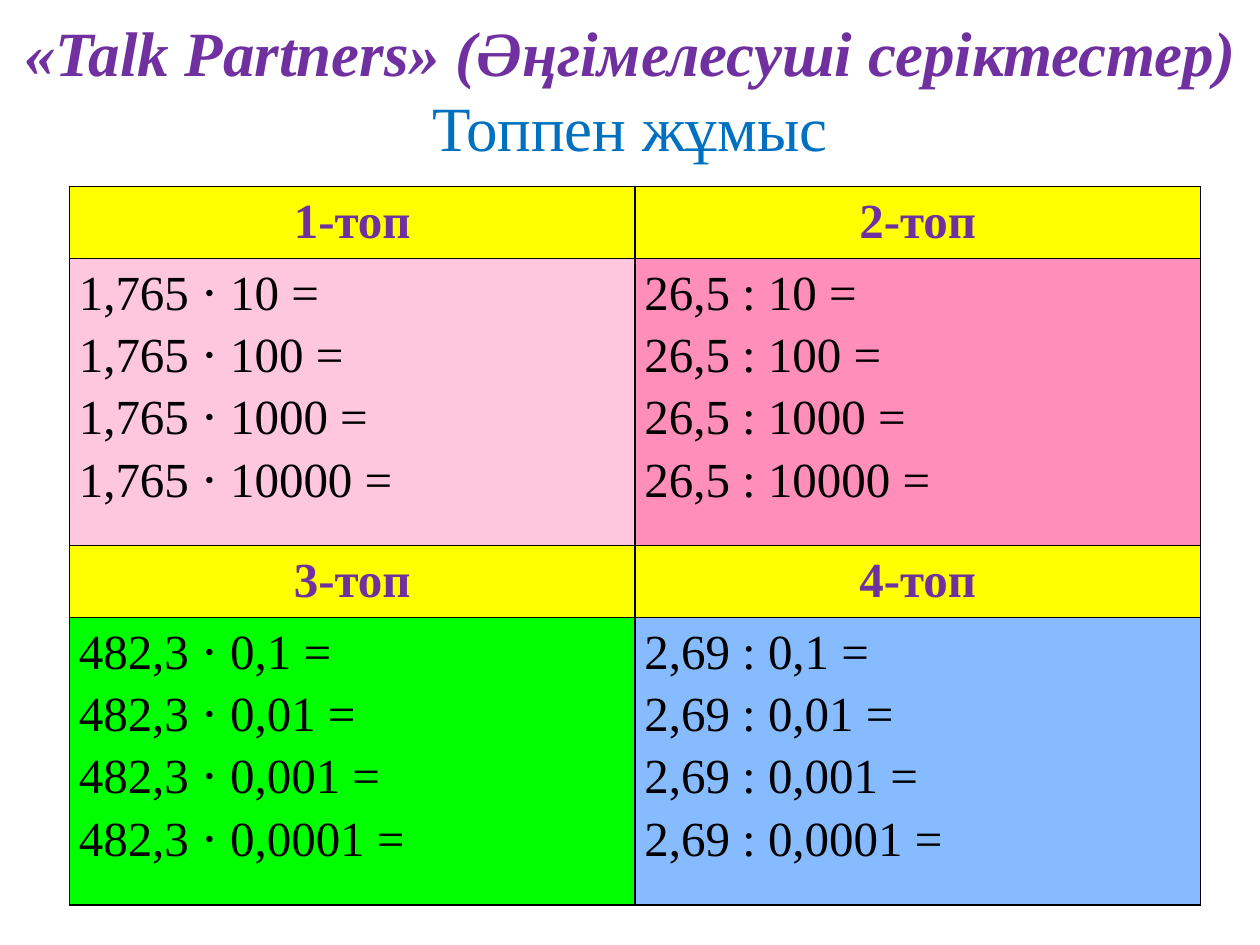
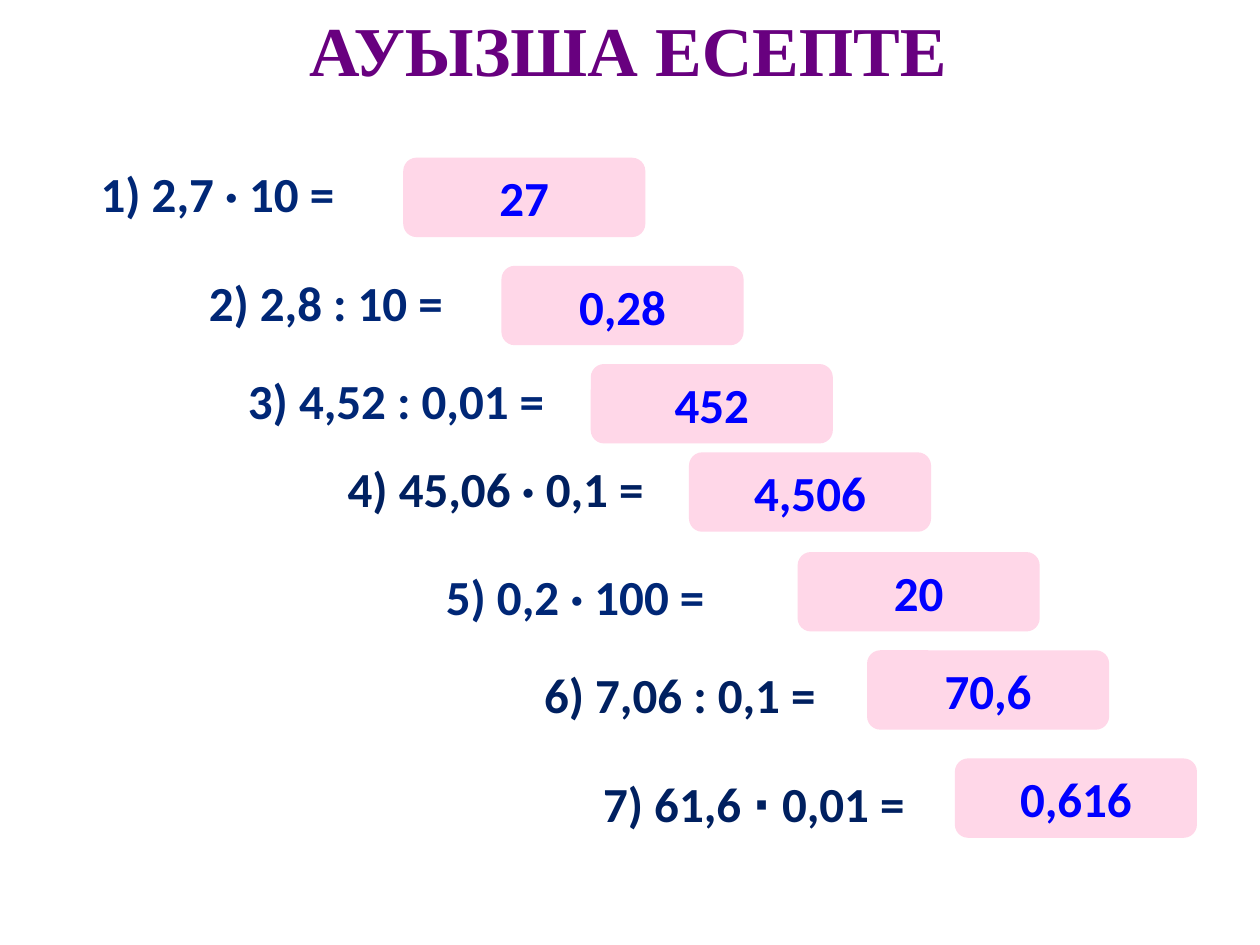
from dataclasses import dataclass
from typing import NamedTuple

from lxml.etree import SubElement
from pptx import Presentation
from pptx.dml.color import RGBColor
from pptx.enum.shapes import MSO_SHAPE as Shape
from pptx.enum.text import MSO_ANCHOR as Anchor, PP_ALIGN as Align
from pptx.oxml.ns import qn
from pptx.util import Cm, Pt


@dataclass(frozen=True)
class Theme:
    serif: str = "Times New Roman"
    sans: str = "Calibri"
    heading_size: int = 40
    title_size: int = 36
    body_size: int = 28
    violet: str = "7030A0"
    plum: str = "68007F"
    sky: str = "0070C0"
    navy: str = "002776"
    dark_navy: str = "002060"
    blue: str = "0000FF"
    black: str = "000000"
    yellow: str = "FFFF00"
    light_pink: str = "FFC7DD"
    pink: str = "FF8EBA"
    green: str = "00FF00"
    light_blue: str = "87BBFF"
    answer_fill: str = "FFD7E8"


THEME = Theme()


class Style(NamedTuple):
    font: str
    size: int
    color: str
    bold: bool = False
    italic: bool = False


class Box(NamedTuple):
    left: float
    top: float
    width: float
    height: float


class Group(NamedTuple):
    name: str
    fill: str
    tasks: tuple[str, ...]


class Task(NamedTuple):
    text: str
    left: float
    top: float
    answer: str
    answer_left: float
    answer_top: float
    color: str = THEME.navy


TITLE = Style(THEME.serif, THEME.title_size, THEME.violet, True, True)
SUBTITLE = Style(THEME.serif, THEME.title_size, THEME.sky)
HEADING = Style(THEME.serif, THEME.heading_size, THEME.plum, True)
GROUP_NAME = Style(THEME.serif, THEME.body_size, THEME.violet, True)
GROUP_TASK = Style(THEME.serif, THEME.body_size, THEME.black)
ANSWER = Style(THEME.sans, THEME.body_size, THEME.blue, True)

FACTORS = ("10", "100", "1000", "10000")
FRACTIONS = ("0,1", "0,01", "0,001", "0,0001")


def series(start: str, numbers: tuple[str, ...]) -> tuple[str, ...]:
    return tuple(f"{start} {n} =" for n in numbers)


GROUPS = (
    Group("1-топ", THEME.light_pink, series("1,765 ⋅", FACTORS)),
    Group("2-топ", THEME.pink, series("26,5 :", FACTORS)),
    Group("3-топ", THEME.green, series("482,3 ⋅", FRACTIONS)),
    Group("4-топ", THEME.light_blue, series("2,69 :", FRACTIONS)),
)

TASKS = (
    Task("1) 2,7 · 10 =", 1.78, 3.18, "27", 8.13, 3.18),
    Task("2) 2,8 : 10 =", 3.96, 5.36, "0,28", 10.11, 5.36),
    Task("3) 4,52 : 0,01 =", 4.75, 7.34, "452", 11.91, 7.34),
    Task("4) 45,06 · 0,1 =", 6.76, 9.12, "4,506", 13.89, 9.12, THEME.dark_navy),
    Task("5) 0,2 · 100 =", 8.74, 11.3, "20", 16.08, 11.13),
    Task("6) 7,06 : 0,1 =", 10.72, 13.28, "70,6", 17.48, 13.11, THEME.dark_navy),
    Task("7) 61,6 ⋅ 0,01 =", 11.91, 15.47, "0,616", 19.25, 15.29, THEME.dark_navy),
)


def write(tf, lines, align=Align.LEFT, spacing=None) -> None:
    for i, (text, style) in enumerate(lines):
        p = tf.add_paragraph() if i else tf.paragraphs[0]
        p.alignment = align
        if spacing:
            p.line_spacing = spacing
        r = p.add_run()
        r.text = text
        r.font.name = style.font
        r.font.size = Pt(style.size)
        r.font.bold = style.bold
        r.font.italic = style.italic
        r.font.color.rgb = RGBColor.from_string(style.color)


def add_text(s, box: Box, lines, align=Align.LEFT, anchor=Anchor.TOP) -> None:
    tf = s.shapes.add_textbox(*map(Cm, box)).text_frame
    tf.word_wrap = True
    tf.vertical_anchor = anchor
    write(tf, lines, align)


def add_answer(s, box: Box, text: str) -> None:
    sp = s.shapes.add_shape(Shape.ROUNDED_RECTANGLE, *map(Cm, box))
    sp.shadow.inherit = False
    sp.fill.solid()
    sp.fill.fore_color.rgb = RGBColor.from_string(THEME.answer_fill)
    sp.line.fill.background()
    sp.text_frame.vertical_anchor = Anchor.MIDDLE
    write(sp.text_frame, [(text, ANSWER)], Align.CENTER)


def fill_cell(cell, color: str, lines, align=Align.LEFT) -> None:
    cell.margin_left = cell.margin_right = Cm(0.19)
    cell.margin_top = cell.margin_bottom = 0
    write(cell.text_frame, lines, align, 1.15)
    tc_pr = cell._tc.get_or_add_tcPr()
    for side in ("lnL", "lnR", "lnT", "lnB"):
        ln = SubElement(tc_pr, qn(f"a:{side}"), w=str(Pt(1)))
        SubElement(SubElement(ln, qn("a:solidFill")), qn("a:srgbClr"), val=THEME.black)
    cell.fill.solid()
    cell.fill.fore_color.rgb = RGBColor.from_string(color)


def add_group_table(s, box: Box, row_heights: tuple[float, float]) -> None:
    table = s.shapes.add_table(4, 2, *map(Cm, box)).table
    for i, row in enumerate(table.rows):
        row.height = Cm(row_heights[i % 2])
    for i, group in enumerate(GROUPS):
        row, col = i // 2 * 2, i % 2
        fill_cell(table.cell(row, col), THEME.yellow,
                  [(group.name, GROUP_NAME)], Align.CENTER)
        fill_cell(table.cell(row + 1, col), group.fill,
                  [(task, GROUP_TASK) for task in group.tasks])


def build_group_work(s) -> None:
    add_group_table(s, Box(1.4, 3.76, 22.8, 14.48), (1.45, 5.79))
    add_text(s, Box(0, 0.13, 25.4, 3.33),
             [("«Talk Partners» (Әңгімелесуші серіктестер)", TITLE),
              ("Топпен жұмыс", SUBTITLE)], Align.CENTER, Anchor.MIDDLE)


def build_mental_maths(s) -> None:
    add_text(s, Box(5.56, 0, 14.2, 1.96), [("АУЫЗША ЕСЕПТЕ", HEADING)], Align.CENTER)
    for task in TASKS:
        style = Style(THEME.sans, THEME.body_size, task.color, True)
        add_text(s, Box(task.left, task.top, 8.2, 1.45), [(task.text, style)])
        add_answer(s, Box(task.answer_left, task.answer_top, 4.88, 1.6), task.answer)


def main() -> None:
    prs = Presentation()
    prs.slide_width, prs.slide_height = Cm(25.4), Cm(19.05)
    for build in (build_group_work, build_mental_maths):
        build(prs.slides.add_slide(prs.slide_layouts[6]))
    prs.save("out.pptx")


if __name__ == "__main__":
    main()
